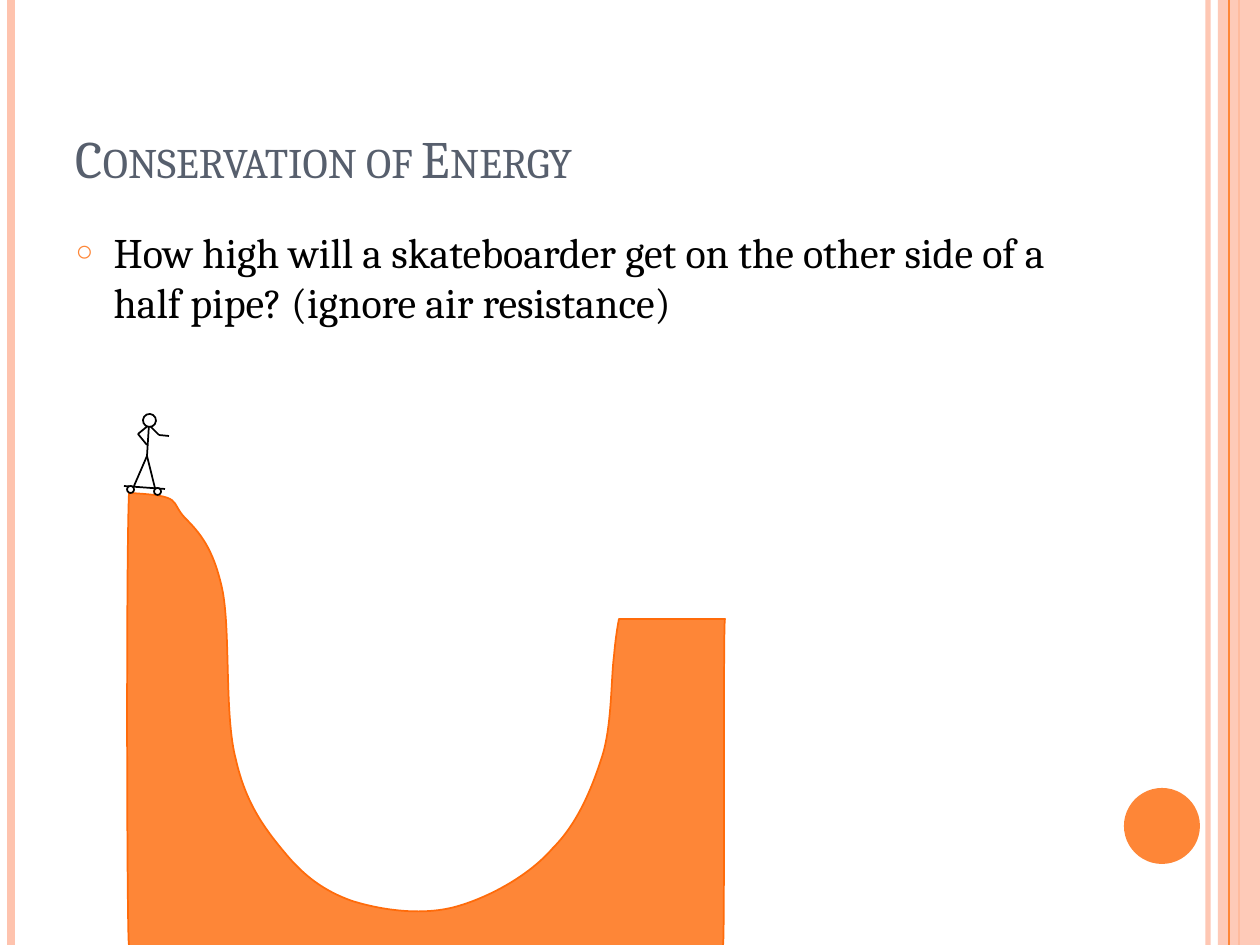
import pptx
import pptx.util
import pptx.dml.color
import pptx.enum.shapes
import pptx.enum.text
import pptx.oxml
import pptx.oxml.ns
from lxml import etree

PX = 914400 / 126
FONT = "Cambria"
COLORS = {"orange": "FE8637", "edge": "FF6B0A", "peach": "FEC3AE",
          "slate": "575F6D", "black": "000000", "white": "FFFFFF"}

TITLE = "Conservation of Energy"
QUESTION = ("How high will a skateboarder get on the other side of a half pipe? "
            "(ignore air resistance)")

# x, colour, width in points, opacity in percent
STRIPES_BEHIND = [(1208, "peach", 3, 93), (11, "peach", 4.5, 100), (1239, "orange", 1.5, 100)]
STRIPES_FRONT = [(1229, "orange", 0.75, 100)]

RAMP_START = (129, 945)
# Three points: two controls and the end of a curve; one point: the end of a line
RAMP_SEGMENTS = [
    [(127, 945), (126, 563), (129, 493)],
    [(185, 496), (169, 501), (185, 518)],
    [(200, 533), (213, 548), (222, 588)],
    [(231, 629), (224, 716), (236, 760)],
    [(246, 804), (265, 829), (285, 853)],
    [(304, 876), (324, 891), (352, 901)],
    [(381, 910), (421, 916), (455, 907)],
    [(488, 898), (529, 876), (553, 848)],
    [(578, 823), (592, 788), (602, 757)],
    [(612, 726), (611, 679), (614, 656)],
    [(616, 633), (619, 619), (619, 619)],
    [(725, 619)],
    [(723, 618), (725, 945), (723, 945)],
]

HIP, NECK, LEFT_ELBOW, RIGHT_ELBOW = (147, 456), (149, 425), (138, 434), (159, 435)
LIMBS = [((134, 486), HIP), (HIP, (155, 488)), (NECK, HIP), (NECK, RIGHT_ELBOW),
         (LEFT_ELBOW, (147, 445)), (RIGHT_ELBOW, (169, 436)), (LEFT_ELBOW, NECK)]
HEAD = (143, 414, 13)
BOARD = ((124, 486), (165, 489))
WHEELS = [(127, 486, 7), (154, 488, 7)]
LEAN = 4.2


def emu(*lengths):
    return [round(length * PX) for length in lengths]


def rgb(name):
    return pptx.dml.color.RGBColor.from_string(COLORS[name])


def set_opacity(element, percent):
    if percent < 100:
        color = element.find(".//" + pptx.oxml.ns.qn("a:srgbClr"))
        etree.SubElement(color, pptx.oxml.ns.qn("a:alpha"), val=str(percent * 1000))


def add_line(shapes, start, end, color, width, opacity=100):
    line = shapes.add_connector(pptx.enum.shapes.MSO_CONNECTOR.STRAIGHT,
                                *emu(*start, *end))
    line.line.color.rgb = rgb(color)
    line.line.width = pptx.util.Pt(width)
    properties = line._element.spPr
    set_opacity(properties, opacity)
    etree.SubElement(properties, pptx.oxml.ns.qn("a:effectLst"))


def paint(shape, fill, edge=None):
    shape.shadow.inherit = False
    shape.fill.solid()
    shape.fill.fore_color.rgb = rgb(fill)
    if edge:
        shape.line.color.rgb = rgb(edge)
        shape.line.width = pptx.util.Pt(1)
    else:
        shape.line.fill.background()


def add_circle(shapes, left, top, size, fill, edge=None, rotation=0):
    circle = shapes.add_shape(pptx.enum.shapes.MSO_SHAPE.OVAL,
                              *emu(left, top, size, size))
    circle.rotation = rotation
    paint(circle, fill, edge)


def add_stripes(slide, stripes):
    for x, color, width, opacity in stripes:
        add_line(slide.shapes, (x, 0), (x, 945), color, width, opacity)


def add_frame(slide):
    """Draw the side stripes and the dot behind the placeholders."""
    placeholders = list(slide.placeholders)
    add_stripes(slide, STRIPES_BEHIND)
    band = slide.shapes.add_shape(pptx.enum.shapes.MSO_SHAPE.RECTANGLE,
                                  *emu(1218, 0, 42, 945))
    paint(band, "peach")
    set_opacity(band._element.spPr, 87)
    add_stripes(slide, STRIPES_FRONT)
    add_circle(slide.shapes, 1124, 788, 76, "orange")
    for placeholder in placeholders:
        slide.shapes._spTree.append(placeholder._element)


def write(placeholder, box, text, size, color, anchor):
    """Move a placeholder, fill it with one run and return paragraph and run."""
    placeholder.left, placeholder.top, placeholder.width, placeholder.height = emu(*box)
    frame = placeholder.text_frame
    frame.word_wrap = True
    frame.auto_size = pptx.enum.text.MSO_AUTO_SIZE.NONE
    frame.vertical_anchor = anchor
    para = frame.paragraphs[0]
    para.alignment = pptx.enum.text.PP_ALIGN.LEFT
    span = para.add_run()
    span.text = text
    span.font.name = FONT
    span.font.size = pptx.util.Pt(size)
    span.font.color.rgb = rgb(color)
    return para, span


def add_bullet(para):
    para.space_before = pptx.util.Pt(6)
    properties = para._p.get_or_add_pPr()
    indent = emu(38)[0]
    properties.set("marL", str(indent))
    properties.set("indent", str(-indent))
    bullet_color = etree.SubElement(properties, pptx.oxml.ns.qn("a:buClr"))
    etree.SubElement(bullet_color, pptx.oxml.ns.qn("a:srgbClr"), val=COLORS["orange"])
    etree.SubElement(properties, pptx.oxml.ns.qn("a:buSzPct"), val="70000")
    etree.SubElement(properties, pptx.oxml.ns.qn("a:buChar"), char="○")


def add_ramp(slide):
    """Lay all points as a freeform, then join each group of three into a curve."""
    builder = slide.shapes.build_freeform(*emu(*RAMP_START))
    builder.add_line_segments([emu(*point) for segment in RAMP_SEGMENTS for point in segment],
                              close=False)
    ramp = builder.convert_to_shape()
    steps = iter(ramp._element.findall(".//" + pptx.oxml.ns.qn("a:lnTo")))
    for segment in RAMP_SEGMENTS:
        group = [next(steps) for _ in segment]
        if len(group) == 3:
            curve = etree.Element(pptx.oxml.ns.qn("a:cubicBezTo"))
            group[0].addprevious(curve)
            for step in group:
                curve.append(step[0])
                step.getparent().remove(step)
    paint(ramp, "orange", "edge")


def add_skateboarder(slide):
    parts = slide.shapes.add_group_shape().shapes
    for start, end in LIMBS:
        add_line(parts, start, end, "black", 1)
    add_circle(parts, *HEAD, "white", "black", LEAN)
    add_line(parts, *BOARD, "black", 1)
    for wheel in WHEELS:
        add_circle(parts, *wheel, "white", "black", LEAN)


def main():
    deck = pptx.Presentation()
    deck.slide_width, deck.slide_height = pptx.util.Inches(10), pptx.util.Inches(7.5)
    slide = deck.slides.add_slide(deck.slide_layouts[1])
    add_frame(slide)
    anchors = pptx.enum.text.MSO_ANCHOR
    title_span = write(slide.shapes.title, (63, 38, 1029, 157), TITLE, 30,
                       "slate", anchors.BOTTOM)[1]
    title_span.font._element.set("cap", "small")
    question = write(slide.placeholders[1], (63, 220, 1029, 672), QUESTION, 24,
                     "black", anchors.TOP)[0]
    add_bullet(question)
    add_ramp(slide)
    add_skateboarder(slide)
    deck.save("out.pptx")


if __name__ == "__main__":
    main()
